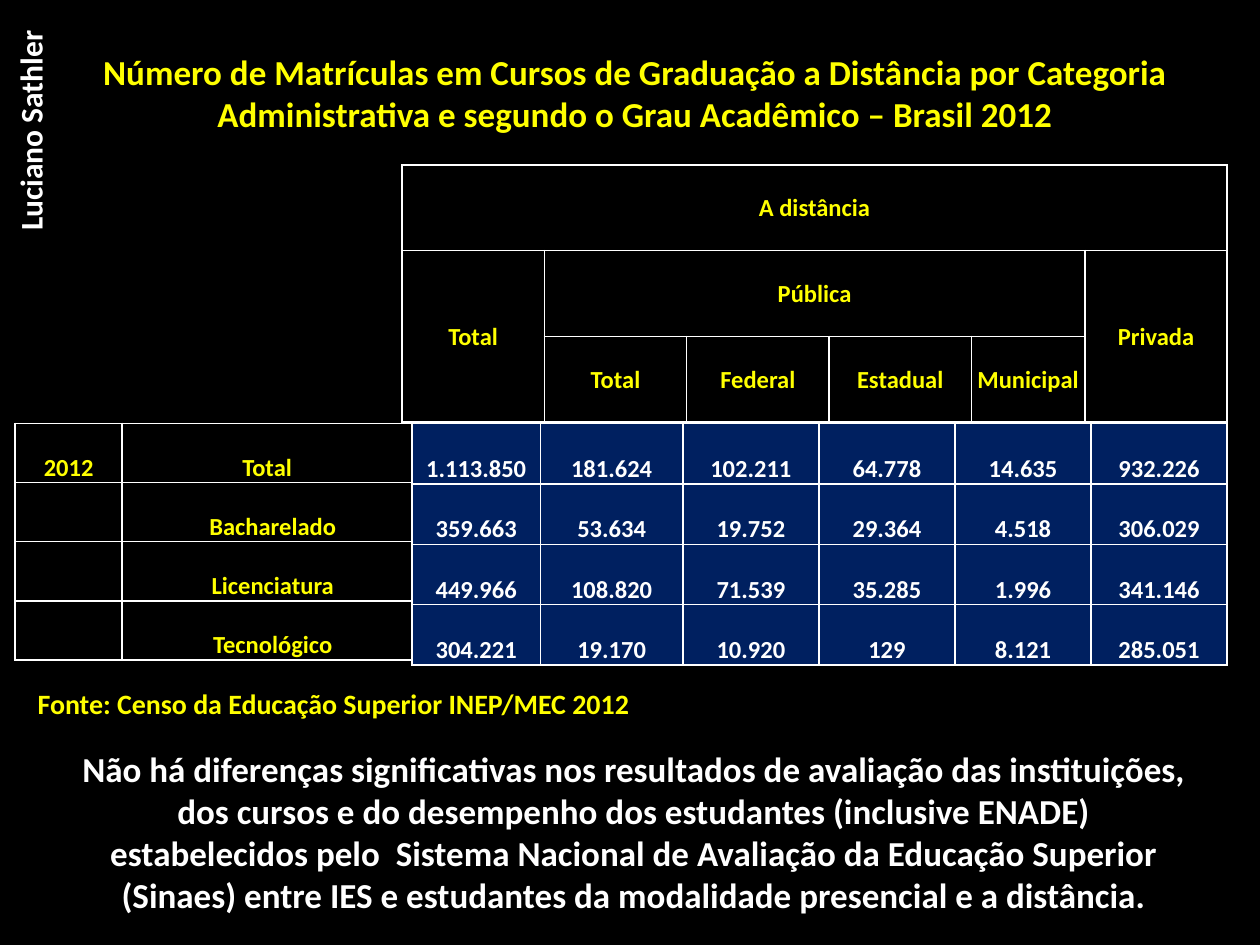
from lxml import etree
from pptx import Presentation
from pptx.dml.color import RGBColor
from pptx.enum import text
from pptx.oxml import ns
from pptx.util import Inches, Pt

BLACK = RGBColor(0, 0, 0)
WHITE = RGBColor(255, 255, 255)
YELLOW = RGBColor(255, 255, 0)
NAVY = RGBColor(0, 32, 96)

CENTER = text.PP_ALIGN.CENTER
LEFT = text.PP_ALIGN.LEFT
MIDDLE = text.MSO_ANCHOR.MIDDLE
BOTTOM = text.MSO_ANCHOR.BOTTOM

HEADS = [
    ["A distância", "", "", "", "", ""],
    ["Total", "Pública", "", "", "", "Privada"],
    ["", "Total", "Federal", "Estadual", "Municipal", ""],
]
SPANS = [((0, 0), (0, 5)), ((1, 0), (2, 0)), ((1, 1), (1, 4)), ((1, 5), (2, 5))]
DEGREES = [["2012", "Total"], ["", "Bacharelado"], ["", "Licenciatura"], ["", "Tecnológico"]]
COUNTS = [
    ["1.113.850", "181.624", "102.211", "64.778", "14.635", "932.226"],
    ["359.663", "53.634", "19.752", "29.364", "4.518", "306.029"],
    ["449.966", "108.820", "71.539", "35.285", "1.996", "341.146"],
    ["304.221", "19.170", "10.920", "129", "8.121", "285.051"],
]


def write(frame, words, size, color, align):
    frame.text = words
    para = frame.paragraphs[0]
    para.alignment = align
    look = {"name": "Calibri", "size": Pt(size), "bold": True}
    for key, value in look.items():
        setattr(para.font, key, value)
    para.font.color.rgb = color


def border(cell):
    props = cell._tc.get_or_add_tcPr()
    for index, side in enumerate(("lnL", "lnR", "lnT", "lnB")):
        line = etree.Element(ns.qn(f"a:{side}"), w=str(Pt(1)))
        fill = etree.SubElement(line, ns.qn("a:solidFill"))
        etree.SubElement(fill, ns.qn("a:srgbClr"), val=str(WHITE))
        props.insert(index, line)


def add_grid(slide, left, top, widths, height, rows, color, back, anchor, spans=()):
    frame = slide.shapes.add_table(
        len(rows), len(widths), Inches(left), Inches(top),
        Inches(sum(widths)), Inches(height * len(rows)))
    table = frame.table
    for col, width in zip(table.columns, widths):
        col.width = Inches(width)
    inset = Inches(0.01)
    style = {"margin_left": inset, "margin_right": inset, "margin_top": inset,
             "margin_bottom": 0, "vertical_anchor": anchor}
    for r, row in enumerate(rows):
        table.rows[r].height = Inches(height)
        for c, words in enumerate(row):
            cell = table.cell(r, c)
            write(cell.text_frame, words, 14, color, CENTER)
            for key, value in style.items():
                setattr(cell, key, value)
            cell.fill.solid()
            cell.fill.fore_color.rgb = back
            border(cell)
    for start, end in spans:
        table.cell(*start).merge(table.cell(*end))
    return table


def place(shape, left, top, width, height):
    box = {"left": left, "top": top, "width": width, "height": height}
    for key, value in box.items():
        setattr(shape, key, Inches(value))


def add_title(slide, words, *box):
    title = slide.shapes.title
    place(title, *box)
    write(title.text_frame, words, 20, YELLOW, CENTER)
    title.text_frame.vertical_anchor = text.MSO_ANCHOR.TOP


def add_note(slide, words, size, color, align, *box, wrap=True):
    note = slide.shapes.add_textbox(*map(Inches, box))
    note.text_frame.word_wrap = wrap
    write(note.text_frame, words, size, color, align)
    return note


def main():
    deck = Presentation()
    deck.slide_width, deck.slide_height = Inches(10), Inches(7.5)
    slide = deck.slides.add_slide(deck.slide_layouts[5])
    slide.background.fill.solid()
    slide.background.fill.fore_color.rgb = BLACK

    add_grid(slide, 3.27, 3.36, [1.02, 1.13] + [1.08] * 4, 0.48,
             COUNTS, WHITE, NAVY, BOTTOM)
    add_grid(slide, 3.19, 1.31, [1.13] * 4 + [0.9, 1.13], 0.68,
             HEADS, YELLOW, BLACK, MIDDLE, SPANS)
    degrees = add_grid(slide, 0.12, 3.36, [0.85, 2.3], 0.47,
                       DEGREES, YELLOW, BLACK, BOTTOM)
    for row in range(1, len(DEGREES)):
        degrees.cell(row, 1).margin_left = Inches(0.1)

    add_title(slide, "Número de Matrículas em Cursos de Graduação a Distância por Categoria "
              "Administrativa e segundo o Grau Acadêmico – Brasil 2012", 0.51, 0.35, 9.06, 0.77)
    add_note(slide, "Fonte: Censo da Educação Superior INEP/MEC 2012",
             16, YELLOW, LEFT, 0.2, 5.4, 9.06, 0.37)
    add_note(slide, "Não há diferenças significativas nos resultados de avaliação das "
             "instituições, dos cursos e do desempenho dos estudantes (inclusive ENADE) "
             "estabelecidos pelo  Sistema Nacional de Avaliação da Educação Superior (Sinaes) "
             "entre IES e estudantes da modalidade presencial e a distância.",
             20, WHITE, CENTER, 0.5, 5.88, 9.06, 1.45)
    author = add_note(slide, "Luciano Sathler", 18, WHITE, LEFT,
                      -0.66, 0.83, 1.8, 0.4, wrap=False)
    author.rotation = 270
    deck.save("out.pptx")


if __name__ == "__main__":
    main()
